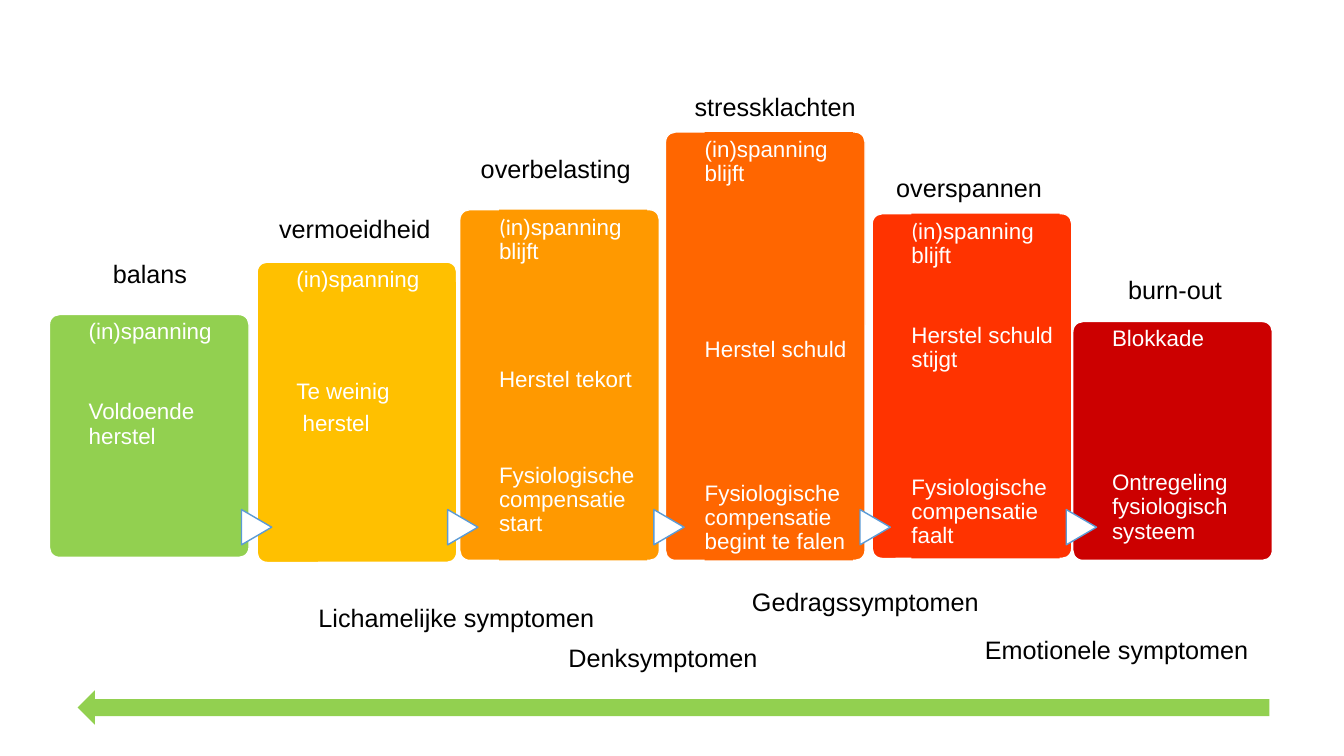
from dataclasses import dataclass

from pptx import Presentation
from pptx.dml.color import RGBColor
from pptx.enum.shapes import MSO_SHAPE
from pptx.enum.text import MSO_ANCHOR, MSO_AUTO_SIZE, PP_ALIGN
from pptx.util import Inches, Pt

ROUNDED = MSO_SHAPE.ROUNDED_RECTANGLE
RECTANGLE = MSO_SHAPE.RECTANGLE
TRIANGLE = MSO_SHAPE.FLOWCHART_EXTRACT
LEFT_ARROW = MSO_SHAPE.LEFT_ARROW
TOP = MSO_ANCHOR.TOP
LEFT = PP_ALIGN.LEFT
FIT_SHAPE = MSO_AUTO_SIZE.SHAPE_TO_FIT_TEXT

WHITE = RGBColor(0xFF, 0xFF, 0xFF)
BLACK = RGBColor(0x00, 0x00, 0x00)
BLUE = RGBColor(0x5B, 0x9B, 0xD5)
GREEN = RGBColor(0x92, 0xD0, 0x50)
YELLOW = RGBColor(0xFF, 0xC0, 0x00)
AMBER = RGBColor(0xFF, 0x99, 0x00)
ORANGE = RGBColor(0xFF, 0x66, 0x00)
RED = RGBColor(0xFF, 0x33, 0x00)
DARK_RED = RGBColor(0xCC, 0x00, 0x00)

BAR_WIDTH = 1.98
TEXT_INSET, TEXT_WIDTH = 0.39, 1.47
MARKER_LEFT, MARKER_TOP, MARKER_PITCH = 2.37, 5.08, 2.045
MARKER_WIDTH, MARKER_HEIGHT = 0.35, 0.3
BASE_GAP, GAP_STEP = 5.7, 11.4  # points between paragraphs
LABEL_HEIGHT = 0.4


@dataclass
class Stage:
    left: float
    top: float
    height: float
    color: RGBColor
    lines: list  # (text, gap steps before it)
    panel: bool = False  # filled panel behind the text
    calibri_letters: int = 0  # opening letters set in Calibri


STAGES = [
    Stage(0.49, 3.12, 2.41, GREEN,
          [("(in)spanning", 0), ("Voldoende herstel", 3)]),
    Stage(2.55, 2.6, 2.98, YELLOW,
          [("(in)spanning", 0), ("Te weinig", 5), (" herstel", 0)]),
    Stage(4.56, 2.08, 3.48, AMBER,
          [("(in)spanning blijft", 0), ("Herstel tekort", 6),
           ("Fysiologische compensatie start", 4)], True, 2),
    Stage(6.6, 1.31, 4.25, ORANGE,
          [("(in)spanning blijft", 0), ("Herstel schuld", 9),
           ("Fysiologische compensatie begint te falen", 7)], True),
    Stage(8.65, 2.12, 3.42, RED,
          [("(in)spanning blijft", 0), ("Herstel schuld stijgt", 3),
           ("Fysiologische compensatie faalt", 6)], True, 1),
    Stage(10.64, 3.19, 2.37, DARK_RED,
          [("Blokkade", 0), ("Ontregeling fysiologisch systeem", 7)]),
]

# text, left, top, width
STAGE_LABELS = [
    ("balans", 1.02, 2.51, 0.95),
    ("vermoeidheid", 2.67, 2.07, 1.72),
    ("overbelasting", 4.67, 1.47, 1.7),
    ("stressklachten", 6.79, 0.86, 1.81),
    ("overspannen", 8.79, 1.66, 1.66),
    ("burn-out", 11.09, 2.67, 1.14),
]
SYMPTOM_LABELS = [
    ("Lichamelijke symptomen", 3.06, 5.93, 2.96),
    ("Denksymptomen", 5.54, 6.32, 2.1),
    ("Gedragssymptomen", 7.36, 5.77, 2.47),
    ("Emotionele symptomen", 9.67, 6.24, 2.84),
]


def add_filled_shape(slide, kind, box, fill, line=None):
    shape = slide.shapes.add_shape(kind, *map(Inches, box))
    shape.shadow.inherit = False
    shape.fill.solid()
    shape.fill.fore_color.rgb = fill
    if line is None:
        shape.line.fill.background()
    else:
        shape.line.color.rgb = line
        shape.line.width = Pt(1)
    return shape


def add_stage_text(slide, stage, box):
    if stage.panel:
        shape = add_filled_shape(slide, RECTANGLE, box, stage.color)
    else:
        shape = slide.shapes.add_textbox(*map(Inches, box))
    frame = shape.text_frame
    frame.word_wrap = True
    frame.vertical_anchor = TOP
    frame.margin_left = frame.margin_right = frame.margin_bottom = 0
    frame.margin_top = Inches(0.06)
    for index, (text, steps) in enumerate(stage.lines):
        paragraph = frame.paragraphs[0] if index == 0 else frame.add_paragraph()
        paragraph.alignment = LEFT
        paragraph.line_spacing = 0.9
        if index:
            paragraph.space_before = Pt(BASE_GAP + GAP_STEP * steps)
        paragraph.font.size = Pt(16)
        paragraph.font.color.rgb = WHITE
        split = stage.calibri_letters if index == 0 else 0
        for part, font_name in ((text[:split], "Calibri"), (text[split:], "Arial")):
            if part:
                run = paragraph.add_run()
                run.text = part
                run.font.name = font_name


def add_stage(slide, stage, index):
    """Draw a bar, the marker leading into it, and its text."""
    bar = add_filled_shape(
        slide, ROUNDED, (stage.left, stage.top, BAR_WIDTH, stage.height),
        stage.color, WHITE)
    bar.adjustments[0] = 0.05
    if index:
        marker_left = MARKER_LEFT + MARKER_PITCH * (index - 1)
        marker = add_filled_shape(
            slide, TRIANGLE,
            (marker_left, MARKER_TOP, MARKER_WIDTH, MARKER_HEIGHT), WHITE, BLUE)
        marker.rotation = 90
    add_stage_text(slide, stage, (stage.left + TEXT_INSET, stage.top,
                                  TEXT_WIDTH, stage.height))


def add_label(slide, text, left, top, width):
    box = slide.shapes.add_textbox(*map(Inches, (left, top, width, LABEL_HEIGHT)))
    frame = box.text_frame
    frame.word_wrap = False
    frame.auto_size = FIT_SHAPE
    paragraph = frame.paragraphs[0]
    paragraph.text = text
    paragraph.font.name = "Arial"
    paragraph.font.size = Pt(18)
    paragraph.font.color.rgb = BLACK


def main():
    presentation = Presentation()
    presentation.slide_width = Inches(13.33)
    presentation.slide_height = Inches(7.5)
    slide = presentation.slides.add_slide(presentation.slide_layouts[6])
    for index, stage in enumerate(STAGES):
        add_stage(slide, stage, index)
    for label in STAGE_LABELS + SYMPTOM_LABELS:
        add_label(slide, *label)
    add_filled_shape(slide, LEFT_ARROW, (0.77, 6.85, 11.82, 0.34), GREEN)
    presentation.save("out.pptx")


if __name__ == "__main__":
    main()
